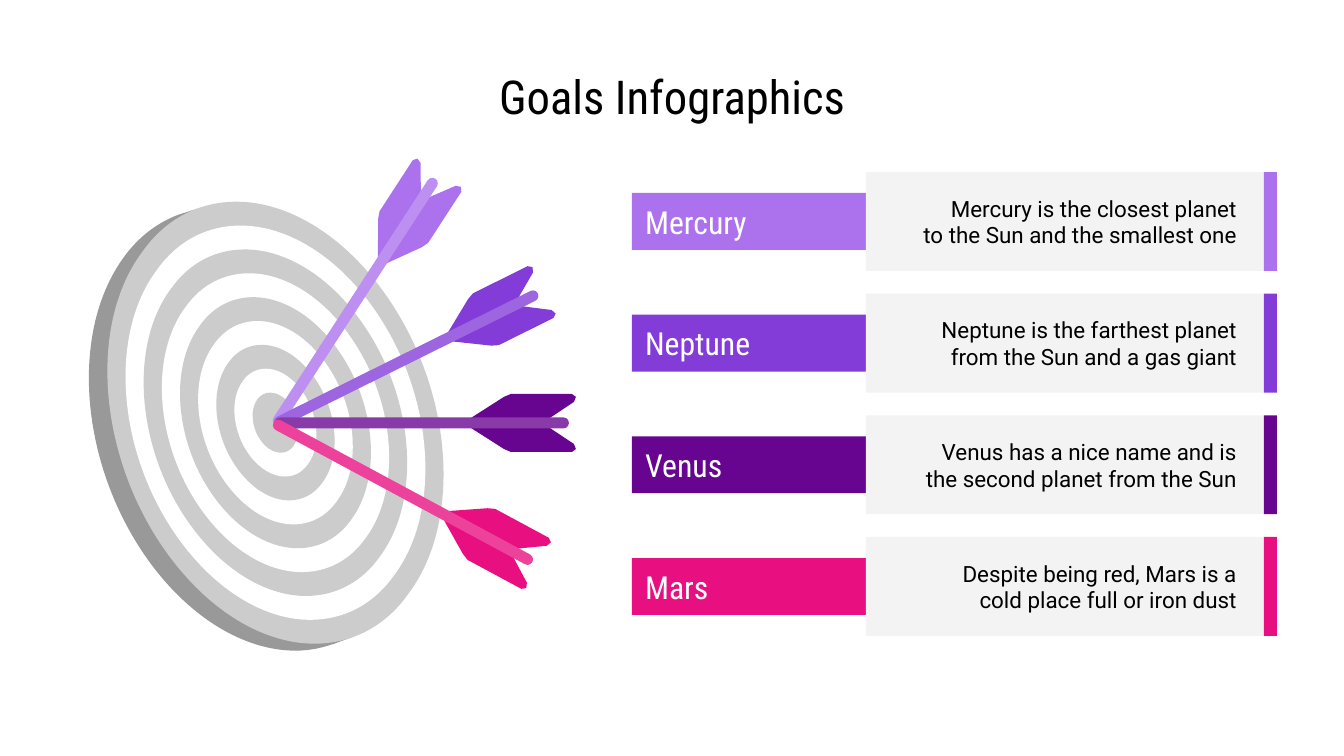
from math import cos, radians, sin

from pptx import Presentation
from pptx.dml.color import RGBColor
from pptx.enum.shapes import MSO_SHAPE as SHAPE
from pptx.enum.text import MSO_ANCHOR as ANCHOR, MSO_AUTO_SIZE as AUTO, PP_ALIGN as ALIGN
from pptx.oxml.ns import qn
from pptx.util import Pt

PX = 914400 / 134.4
COLORS = {
    "black": "000000", "white": "FFFFFF", "panel": "F3F3F3",
    "ring": "CCCCCC", "rim": "999999",
    "mercury": "AC71EC", "neptune": "833CD8", "venus": "670591", "mars": "E81080",
    "mercury_shaft": "BD8FF0", "neptune_shaft": "9D65E0",
    "venus_shaft": "873AA8", "mars_shaft": "ED429B",
}
TITLE = "Goals Infographics"
PLANETS = [
    ("Mercury", "Mercury is the closest planet\vto the Sun and the smallest one"),
    ("Neptune", "Neptune is the farthest planet\vfrom the Sun and a gas giant"),
    ("Venus", "Venus has a nice name and is\vthe second planet from the Sun"),
    ("Mars", "Despite being red, Mars is a\ncold place full or iron dust"),
]
ARROWS = [
    ("mercury", (278, 421), -57),
    ("neptune", (279, 422), -26.4),
    ("venus", (280, 423), 0),
    ("mars", (278, 425), 28.3),
]
ROW_TOP, ROW_PITCH = 172, 121.67

CENTER = (275.5, 422.7)
RING_COUNT, RING_STEP = 9, 0.108
HALF_DISC = [
    (-39, -221), (-75, -221), (-109, -205), (-133, -171), (-190, -95),
    (-176, 44), (-102, 139), (-60, 193), (-8, 221), (39, 221),
]
RIM = [
    (-78, -214), (-97, -208), (-118, -200), (-137, -186), (-152, -165),
    (-208, -88), (-195, 50), (-121, 146), (-79, 200), (-27, 228), (20, 228),
    (35, 228), (47, 225), (59, 221), (78, 214),
]
SHAFT_START, SHAFT_LENGTH, SHAFT_WIDTH = -5, 294, 11
VANE = [
    (191, 5), (224, 26), (231, 29), (292, 29),
    (296, 26), (294, 21), (270, 5),
]


def emu(px):
    return round(px * PX)


def rgb(name):
    return RGBColor.from_string(COLORS[name])


def paint(sp, color):
    sp.shadow.inherit = False
    sp.fill.solid()
    sp.fill.fore_color.rgb = rgb(color)
    sp.line.fill.background()
    return sp


def write(sp, text, font, size, color, align):
    tf = sp.text_frame
    tf.text = text
    tf.word_wrap = True
    tf.auto_size = AUTO.NONE
    tf.vertical_anchor = ANCHOR.MIDDLE
    for p in tf.paragraphs:
        p.alignment = align
        for r in p.runs:
            r.font.name = font
            r.font.size = Pt(size)
            r.font.color.rgb = rgb(color)
    return tf


def box(shapes, color, x, y, w, h, kind=SHAPE.RECTANGLE):
    return paint(shapes.add_shape(kind, emu(x), emu(y), emu(w), emu(h)), color)


def outline(shapes, color, points, origin, scale=1):
    pts = [(emu(origin[0] + x * scale), emu(origin[1] + y * scale)) for x, y in points]
    builder = shapes.build_freeform(*pts[0], scale=1.0)
    builder.add_line_segments(pts[1:], close=True)
    return paint(builder.convert_to_shape(), color)


def curve(sp, lead=0):
    lines = list(sp._element.iter(qn("a:lnTo")))[lead:]
    for i in range(0, len(lines) - 2, 3):
        first, *controls = lines[i:i + 3]
        bezier = first.makeelement(qn("a:cubicBezTo"), {})
        first.addprevious(bezier)
        for line in (first, *controls):
            bezier.append(line[0])
            line.getparent().remove(line)


def turn(points, angle):
    c, s = cos(angle), sin(angle)
    return [(x * c - y * s, x * s + y * c) for x, y in points]


def draw_target(shapes):
    curve(outline(shapes, "rim", RIM, CENTER), lead=1)
    disc = HALF_DISC + [(-x, -y) for x, y in HALF_DISC[1:]]
    for i in range(RING_COUNT):
        color = "white" if i % 2 else "ring"
        curve(outline(shapes, color, disc, CENTER, 1 - i * RING_STEP))


def draw_arrow(shapes, color, tip, tilt):
    angle = radians(tilt)
    for side in (-1, 1):
        outline(shapes, color, turn([(x, side * y) for x, y in VANE], angle), tip)
    [(dx, dy)] = turn([(SHAFT_START + SHAFT_LENGTH / 2, 0)], angle)
    shaft = box(shapes, color + "_shaft",
                tip[0] + dx - SHAFT_LENGTH / 2, tip[1] + dy - SHAFT_WIDTH / 2,
                SHAFT_LENGTH, SHAFT_WIDTH, SHAPE.ROUNDED_RECTANGLE)
    shaft.adjustments[0] = 0.5
    shaft.rotation = tilt


def draw_row(shapes, top, name, text):
    color = name.lower()
    label = box(shapes, color, 632, top + 21, 293, 57)
    panel = box(shapes, "panel", 866, top, 398, 99)
    box(shapes, color, 1264, top, 13, 99)
    for tf in (write(label, name, "Roboto Condensed", 17, "white", ALIGN.LEFT),
               write(panel, text, "Roboto", 12, "black", ALIGN.RIGHT)):
        tf.margin_left = tf.margin_top = tf.margin_bottom = emu(13)
        tf.margin_right = emu(27)


def main():
    prs = Presentation()
    prs.slide_width, prs.slide_height = emu(1344), emu(756)
    slide = prs.slides.add_slide(prs.slide_layouts[5])
    title = slide.shapes.title
    title.left, title.top, title.width, title.height = map(emu, (67, 60, 1210, 71))
    write(title, TITLE, "Roboto Condensed", 25, "black", ALIGN.CENTER)
    for i, (name, text) in enumerate(PLANETS):
        draw_row(slide.shapes, ROW_TOP + i * ROW_PITCH, name, text)
    draw_target(slide.shapes)
    for color, tip, tilt in ARROWS:
        draw_arrow(slide.shapes, color, tip, tilt)
    prs.save("out.pptx")


if __name__ == "__main__":
    main()
